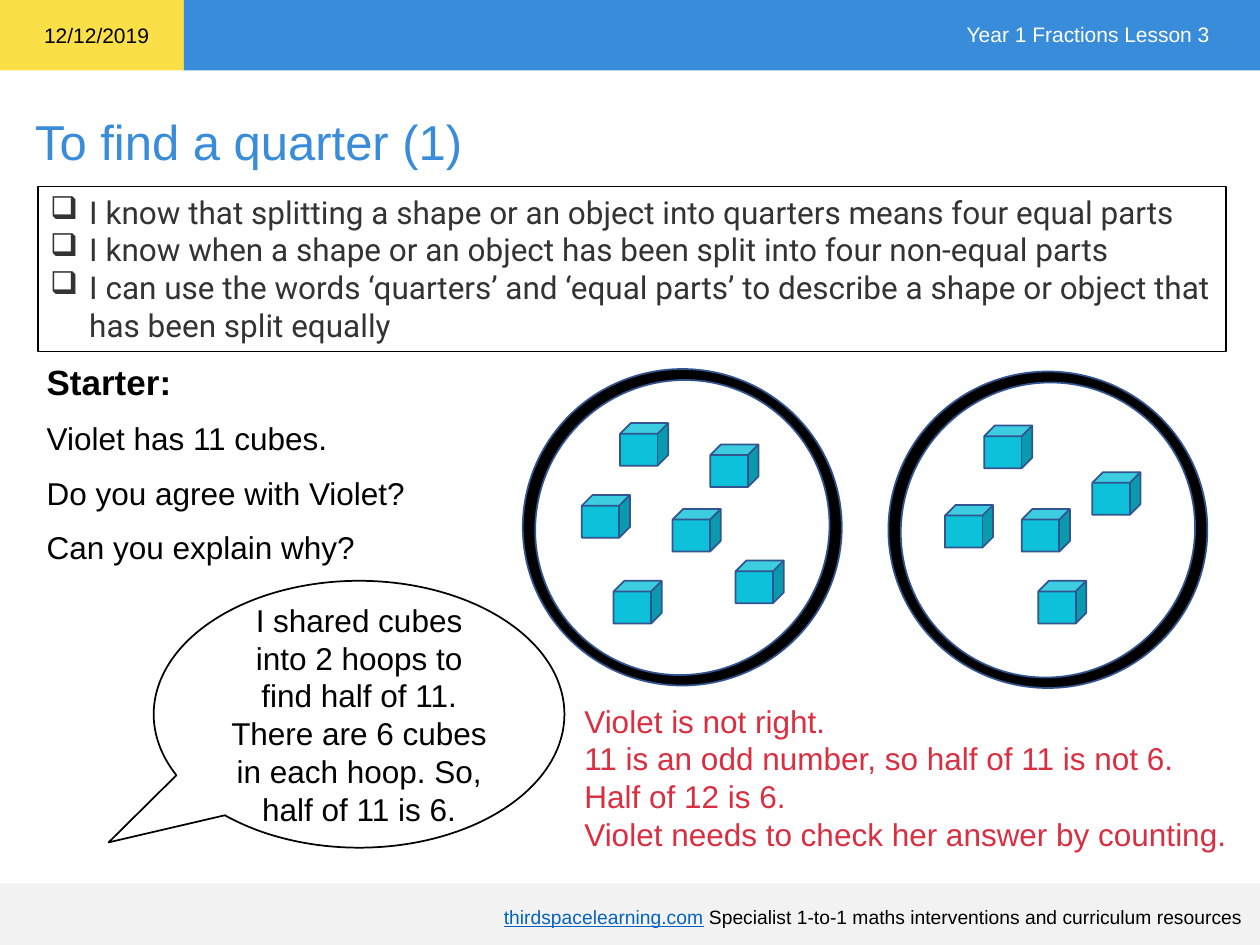
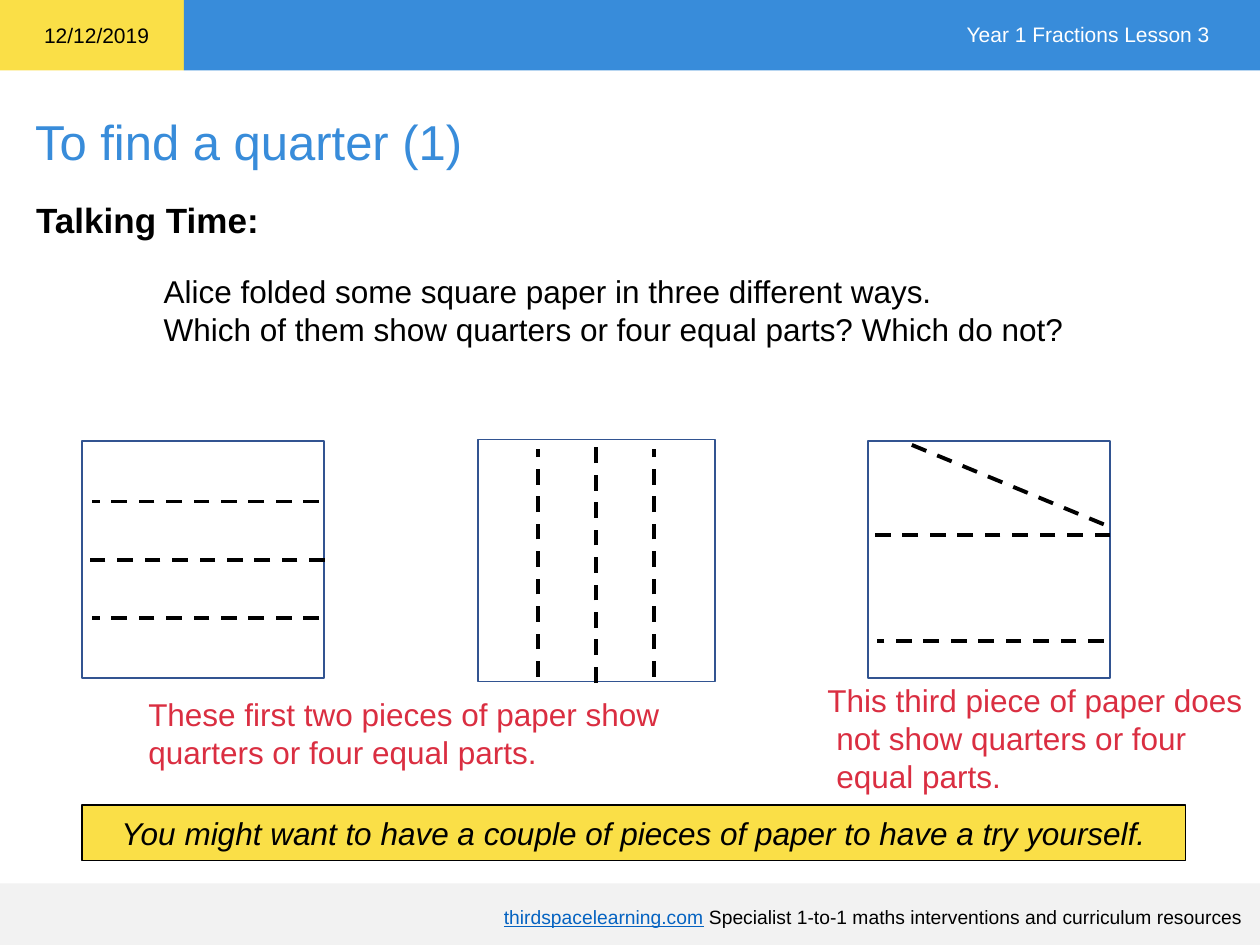
from lxml import etree
from pptx import Presentation
from pptx import util as u
from pptx.dml import color
from pptx.enum import dml, shapes, text
from pptx.oxml import ns

BLUE, YELLOW, GREY, RED = "388CDA", "FADF47", "F2F2F2", "DA2E41"
BLACK, WHITE, OUTLINE, CUBE = "000000", "FFFFFF", "325491", "0CC1D9"
LEFT, CENTRE, RIGHT = text.PP_ALIGN.LEFT, text.PP_ALIGN.CENTER, text.PP_ALIGN.RIGHT
TOP, MIDDLE = text.MSO_ANCHOR.TOP, text.MSO_ANCHOR.MIDDLE
SHAPE = shapes.MSO_SHAPE

# Run styles
BODY = dict(size=18, ink=BLACK)
HEADING = dict(size=20, ink=BLACK, bold=True)
TITLE = dict(size=28, ink=BLUE)
ANSWER = dict(size=18, ink=RED)
CHECK = dict(size=18, ink="333333", face="Roboto")
TIP = dict(size=18, ink=BLACK, italic=True)
SMALL = dict(size=12, ink=BLACK)
SMALL_WHITE = dict(size=12, ink=WHITE)
FOOT = dict(size=11, ink=BLACK)
SITE = dict(size=11, ink="0563C1", underline=True)

# Content; every paragraph is a list of (words, style) runs. Lengths are in cm.
DATE = "12/12/2019"
LESSON = "Year 1 Fractions Lesson 3"
LESSON_TITLE = "To find a quarter (1)"
FOOTER = [("thirdspacelearning.com", SITE),
          (" Specialist 1-to-1 maths interventions and curriculum resources", FOOT)]
BANDS = [((0, 0, 3.71, 1.42), YELLOW),
         ((3.71, 0, 21.69, 1.42), BLUE),
         ((0, 17.81, 25.4, 1.24), GREY)]

CHECKLIST = [
    "I know that splitting a shape or an object into quarters means four equal parts",
    "I know when a shape or an object has been split into four non-equal parts",
    "I can use the words ‘quarters’ and ‘equal parts’ to describe a shape or object that "
    "has been split equally",
]
STARTER = [
    [("Starter:", HEADING)],
    [("Violet has 11 cubes.", BODY)],
    [("Do you agree with Violet?", BODY)],
    [("Can you explain why?", BODY)],
]
VIOLET_SAYS = ("I shared cubes into 2 hoops to find half of 11. There are 6 cubes "
               "in each hoop. So, half of 11 is 6.")
STARTER_ANSWER = [
    "Violet is not right.",
    "11 is an odd number, so half of 11 is not 6.",
    "Half of 12 is 6.",
    "Violet needs to check her answer by counting.",
]
# Hoop corner, then cube corners measured from it
HOOPS = [
    ((10.54, 7.44), [(4.29, 3.86), (1.83, 4.27), (3.02, 2.82),
                     (1.19, 2.54), (3.78, 1.52), (1.96, 1.09)]),
    ((17.91, 7.49), [(3.02, 4.22), (1.14, 2.69), (2.69, 2.77),
                     (4.11, 2.03), (1.93, 1.09)]),
]
HOOP_SIZE, HOLE_SIZE, CUBE_SIZE = (6.43, 6.38), (5.89, 5.99), (0.97, 0.86)

TALK = [
    "Alice folded some square paper in three different ways.",
    "Which of them show quarters or four equal parts? Which do not?",
]
EQUAL_ANSWER = ["These first two pieces of paper show", "quarters or four equal parts."]
UNEQUAL_ANSWER = ["This third piece of paper does", "not show quarters or four", "equal parts."]
TRY_IT = "You might want to have a couple of pieces of paper to have a try yourself."
# Fold ends measured from the corner of the paper
ACROSS = [((4.9, 2.39), (0, 2.39)), ((4.78, 3.56), (0.2, 3.56)), ((4.78, 1.22), (0.2, 1.22))]
DOWN = [tuple((y, x) for x, y in fold) for fold in ACROSS]
UNEVEN = [((4.88, 1.9), (0, 1.9)), ((4.75, 4.04), (0.18, 4.04)), ((4.75, 1.68), (0.69, 0))]
PAPERS = [((1.65, 8.89, 4.88, 4.78), ACROSS),
          ((9.63, 8.86, 4.78, 4.88), DOWN),
          ((17.5, 8.89, 4.88, 4.78), UNEVEN)]


def rgb(code):
    return color.RGBColor.from_string(code)


def cm(lengths):
    return [u.Cm(n) for n in lengths]


def plain(lines, style):
    """Turn plain lines into one-run paragraphs of a single style."""
    return [[(line, style)] for line in lines]


def write(holder, paragraphs, align=LEFT, anchor=TOP, spacing=None, after=None):
    frame = holder.text_frame
    frame.word_wrap = True
    frame.vertical_anchor = anchor
    for i, runs in enumerate(paragraphs):
        para = frame.paragraphs[0] if i == 0 else frame.add_paragraph()
        para.alignment = align
        if spacing:
            para.line_spacing = spacing
            para.space_after = u.Pt(after)
        for words, style in runs:
            run = para.add_run()
            run.text = words
            font = run.font
            font.name = style.get("face", "Arial")
            font.size = u.Pt(style["size"])
            font.color.rgb = rgb(style["ink"])
            font.bold = style.get("bold", False)
            font.italic = style.get("italic", False)
            font.underline = style.get("underline", False)
    return frame


def add_text(slide, box, paragraphs, **layout):
    return write(slide.shapes.add_textbox(*cm(box)), paragraphs, **layout)


def indent(para, left, first=0, bullet=None):
    props = para._p.get_or_add_pPr()
    props.set("marL", str(u.Cm(left)))
    props.set("indent", str(u.Cm(first)))
    if bullet:
        etree.SubElement(props, ns.qn("a:buChar")).set("char", bullet)


def add_block(slide, kind, box, fill, edge=None):
    block = slide.shapes.add_shape(kind, *cm(box))
    block.shadow.inherit = False
    block.fill.solid()
    block.fill.fore_color.rgb = rgb(fill)
    if edge:
        block.line.color.rgb = rgb(edge)
        block.line.width = u.Pt(1)
    else:
        block.line.fill.background()
    return block


def add_fold(slide, corner, ends):
    points = [c + p for end in ends for c, p in zip(corner, end)]
    fold = slide.shapes.add_connector(shapes.MSO_CONNECTOR.STRAIGHT, *cm(points))
    fold.line.color.rgb = rgb(BLACK)
    fold.line.width = u.Pt(2.25)
    fold.line.dash_style = dml.MSO_LINE.DASH
    etree.SubElement(fold._element.spPr, ns.qn("a:effectLst"))


def add_hoop(slide, corner, cubes):
    left, top = corner
    add_block(slide, SHAPE.OVAL, (left, top, *HOOP_SIZE), BLACK, OUTLINE)
    hole = add_block(slide, SHAPE.OVAL, (left + 0.27, top + 0.2, *HOLE_SIZE), WHITE, OUTLINE)
    hole.rotation = 40.9
    for x, y in cubes:
        add_block(slide, SHAPE.CUBE, (left + x, top + y, *CUBE_SIZE), CUBE, OUTLINE)


def lesson_slide(deck):
    """Add a slide with the bands, date, lesson, title and footer."""
    slide = deck.slides.add_slide(deck.slide_layouts[6])
    for box, fill in BANDS:
        add_block(slide, SHAPE.RECTANGLE, box, fill)
    add_text(slide, (1.07, 17.98, 24.23, 1.02), [FOOTER], align=RIGHT, anchor=MIDDLE)
    add_text(slide, (0.46, 2.13, 24.82, 1.45), plain([LESSON_TITLE], TITLE))
    add_text(slide, (0.64, 0.33, 3, 0.76), plain([DATE], SMALL))
    add_text(slide, (17.64, 0.3, 7, 0.76), plain([LESSON], SMALL_WHITE), align=RIGHT)
    return slide


def starter_slide(deck):
    slide = lesson_slide(deck)
    panel = add_block(slide, SHAPE.RECTANGLE, (0.76, 3.76, 23.95, 3.33), WHITE, BLACK)
    for para in write(panel, plain(CHECKLIST, CHECK)).paragraphs:
        indent(para, 0.79, -0.79, "❑")
    add_text(slide, (0.69, 7.09, 22.38, 4.45), STARTER, spacing=1.07, after=8)
    bubble = add_block(slide, SHAPE.OVAL_CALLOUT, (3.1, 11.71, 8.28, 5.38), WHITE, BLACK)
    bubble.adjustments[0], bubble.adjustments[1] = -0.61, 0.48
    write(bubble, plain([VIOLET_SAYS], BODY), align=CENTRE, anchor=MIDDLE)
    for corner, cubes in HOOPS:
        add_hoop(slide, corner, cubes)
    add_text(slide, (11.53, 14.02, 13.8, 3.33), plain(STARTER_ANSWER, ANSWER))


def talking_slide(deck):
    slide = lesson_slide(deck)
    add_text(slide, (3.05, 5.36, 19.35, 1.8), plain(TALK, BODY))
    add_text(slide, (0.48, 3.81, 5.5, 1.12), plain(["Talking Time:"], HEADING),
             spacing=1.07, after=8)
    tip = add_block(slide, SHAPE.RECTANGLE, (1.65, 16.23, 22.25, 1.12), YELLOW, BLACK)
    write(tip, plain([TRY_IT], TIP), align=CENTRE, anchor=MIDDLE)
    for box, folds in PAPERS:
        add_block(slide, SHAPE.RECTANGLE, box, WHITE, OUTLINE)
        for ends in folds:
            add_fold(slide, box[:2], ends)
    add_text(slide, (2.74, 13.89, 11.4, 1.8), plain(EQUAL_ANSWER, ANSWER))
    unequal = add_text(slide, (16.43, 13.61, 8.97, 2.57), plain(UNEQUAL_ANSWER, ANSWER))
    for para in unequal.paragraphs[1:]:
        indent(para, 0.18)


def main():
    deck = Presentation()
    deck.slide_width, deck.slide_height = cm((25.4, 19.05))
    starter_slide(deck)
    talking_slide(deck)
    deck.save("out.pptx")


if __name__ == "__main__":
    main()
